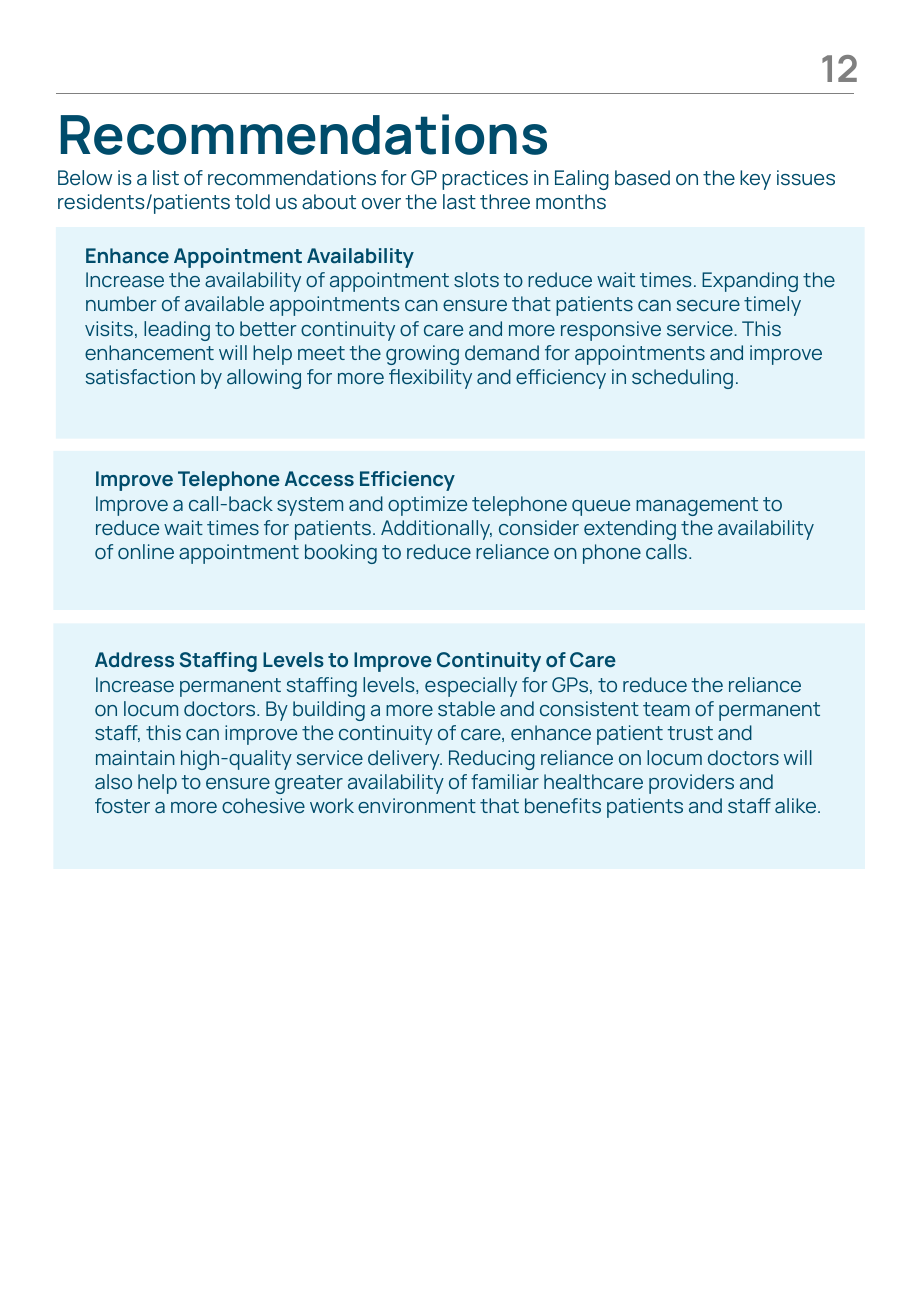
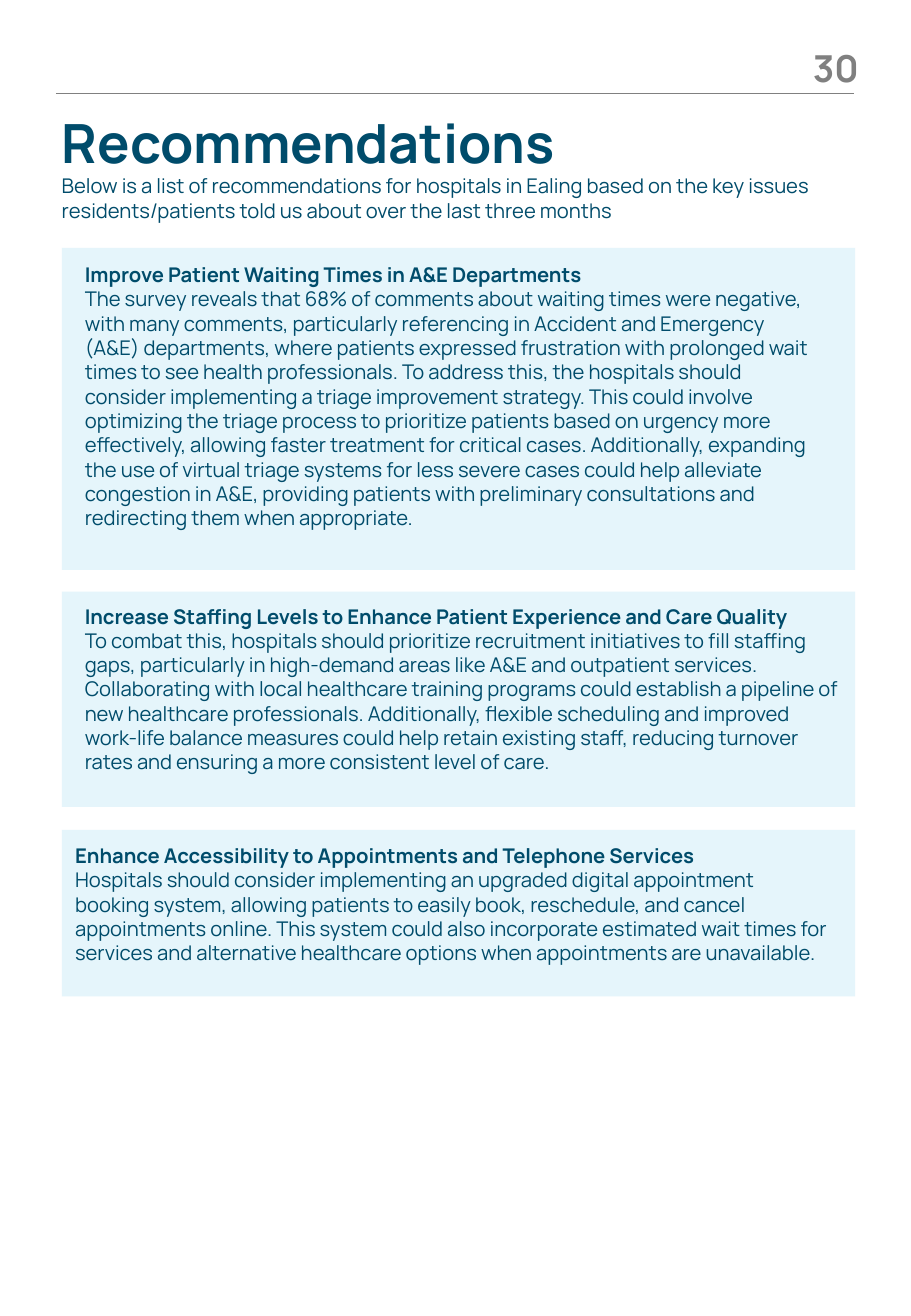
from typing import NamedTuple

from lxml.etree import SubElement
from pptx import Presentation
from pptx.dml.color import RGBColor
from pptx.enum.shapes import MSO_CONNECTOR, MSO_SHAPE
from pptx.enum.text import MSO_ANCHOR, MSO_AUTO_SIZE, PP_ALIGN
from pptx.oxml.ns import qn
from pptx.util import Pt

EMU_PER_PX = 9144  # 100 px to the inch
FONT = "Manrope"
COLORS = {"ink": "004C6B", "panel": "E5F5FB", "grey": "808080"}
TITLE = "Recommendations"
TITLE_HEIGHT, INTRO_HEIGHT = 58, 46


class Card(NamedTuple):
    panel: tuple  # left, top, width, height
    body: tuple
    heading: str
    advice: str


class Page(NamedTuple):
    number: str
    header: tuple  # left, top, width
    intro: str
    cards: list


PAGES = [
    Page("12", (37, 78, 675),
         "Below is a list of recommendations for GP practices in Ealing based on the key "
         "issues residents/patients told us about over the last three months",
         [
             Card((46, 187, 666, 174), (60, 195, 644, 151),
                  "Enhance Appointment Availability",
                  "Increase the availability of appointment slots to reduce wait times. "
                  "Expanding the number of available appointments can ensure that patients "
                  "can secure timely visits, leading to better continuity of care and more "
                  "responsive service. This enhancement will help meet the growing demand "
                  "for appointments and improve satisfaction by allowing for more "
                  "flexibility and efficiency in scheduling."),
             Card((44, 371, 668, 131), (68, 379, 622, 111),
                  "Improve Telephone Access Efficiency",
                  "Improve a call-back system and optimize telephone queue management to "
                  "reduce wait times for patients. Additionally, consider extending the "
                  "availability of online appointment booking to reduce reliance on phone "
                  "calls."),
             Card((44, 513, 668, 202), (68, 528, 622, 172),
                  "Address Staffing Levels to Improve Continuity of Care",
                  "Increase permanent staffing levels, especially for GPs, to reduce the "
                  "reliance on locum doctors. By building a more stable and consistent team "
                  "of permanent staff, this can improve the continuity of care, enhance "
                  "patient trust and maintain high-quality service delivery. Reducing "
                  "reliance on locum doctors will also help to ensure greater availability "
                  "of familiar healthcare providers and foster a more cohesive work "
                  "environment that benefits patients and staff alike."),
         ]),
    Page("30", (41, 85, 671),
         "Below is a list of recommendations for hospitals in Ealing based on the key "
         "issues residents/patients told us about over the last three months",
         [
             Card((51, 204, 653, 265), (60, 211, 622, 252),
                  "Improve Patient Waiting Times in A&E Departments",
                  "The survey reveals that 68% of comments about waiting times were "
                  "negative, with many comments, particularly referencing in Accident and "
                  "Emergency (A&E) departments, where patients expressed frustration with "
                  "prolonged wait times to see health professionals. To address this, the "
                  "hospitals should consider implementing a triage improvement strategy. "
                  "This could involve optimizing the triage process to prioritize patients "
                  "based on urgency more effectively, allowing faster treatment for "
                  "critical cases. Additionally, expanding the use of virtual triage "
                  "systems for less severe cases could help alleviate congestion in A&E, "
                  "providing patients with preliminary consultations and redirecting them "
                  "when appropriate."),
             Card((51, 487, 653, 177), (60, 492, 644, 172),
                  "Increase Staffing Levels to Enhance Patient Experience and Care Quality",
                  "To combat this, hospitals should prioritize recruitment initiatives to "
                  "fill staffing gaps, particularly in high-demand areas like A&E and "
                  "outpatient services. Collaborating with local healthcare training "
                  "programs could establish a pipeline of new healthcare professionals. "
                  "Additionally, flexible scheduling and improved work-life balance "
                  "measures could help retain existing staff, reducing turnover rates and "
                  "ensuring a more consistent level of care."),
             Card((51, 683, 653, 137), (52, 689, 644, 131),
                  "Enhance Accessibility to Appointments and Telephone Services",
                  "Hospitals should consider implementing an upgraded digital appointment "
                  "booking system, allowing patients to easily book, reschedule, and cancel "
                  "appointments online. This system could also incorporate estimated wait "
                  "times for services and alternative healthcare options when appointments "
                  "are unavailable."),
         ]),
]


def px(*lengths):
    return [length * EMU_PER_PX for length in lengths]


def color(name):
    return RGBColor.from_string(COLORS[name])


def set_frame(frame, insets=(10, 5, 10, 5)):
    """Wrap the text from the top, with insets left, top, right, bottom."""
    frame.word_wrap = True
    frame.auto_size = MSO_AUTO_SIZE.NONE
    frame.vertical_anchor = MSO_ANCHOR.TOP
    (frame.margin_left, frame.margin_top,
     frame.margin_right, frame.margin_bottom) = px(*insets)
    return frame


def add_frame(slide, box, **options):
    return set_frame(slide.shapes.add_textbox(*px(*box)).text_frame, **options)


def write(frame, text, size=12, bold=False, ink="ink", align=PP_ALIGN.LEFT):
    """Put text in the empty first paragraph, or in a new one after the last."""
    paragraph = frame.add_paragraph() if frame.text else frame.paragraphs[0]
    paragraph.alignment = align
    run = paragraph.add_run()
    run.text = text
    run.font.name = FONT
    run.font.size = Pt(size)
    run.font.bold = bold
    run.font.color.rgb = color(ink)


def add_page_header(slide, number):
    rule = slide.shapes.add_connector(MSO_CONNECTOR.STRAIGHT, *px(46, 77, 703, 77))
    rule.line.color.rgb = color("grey")
    rule.line.width = Pt(0.75)
    SubElement(rule._element.spPr, qn("a:effectLst"))
    frame = add_frame(slide, (643, 37, 64, 39), insets=(0, 0, 0, 0))
    write(frame, number, size=22, bold=True, ink="grey", align=PP_ALIGN.RIGHT)


def add_title(slide, left, top, width, intro):
    title = slide.shapes.title
    title.left, title.top, title.width, title.height = px(left, top, width, TITLE_HEIGHT)
    write(set_frame(title.text_frame, insets=(10, 5, 10, 0)), TITLE, size=32, bold=True)
    intro_box = (left, top + TITLE_HEIGHT, width, INTRO_HEIGHT)
    write(add_frame(slide, intro_box, insets=(10, 0, 10, 5)), intro)


def add_card(slide, card):
    panel = slide.shapes.add_shape(MSO_SHAPE.RECTANGLE, *px(*card.panel))
    panel.shadow.inherit = False
    panel.fill.solid()
    panel.fill.fore_color.rgb = color("panel")
    panel.line.fill.background()
    frame = add_frame(slide, card.body)
    write(frame, card.heading, bold=True)
    write(frame, card.advice)


def main():
    deck = Presentation()
    deck.slide_width, deck.slide_height = px(750, 1083)
    title_only = deck.slide_layouts[5]
    for page in PAGES:
        slide = deck.slides.add_slide(title_only)
        add_page_header(slide, page.number)
        add_title(slide, *page.header, page.intro)
        for card in page.cards:
            add_card(slide, card)
    deck.save("out.pptx")


if __name__ == "__main__":
    main()
